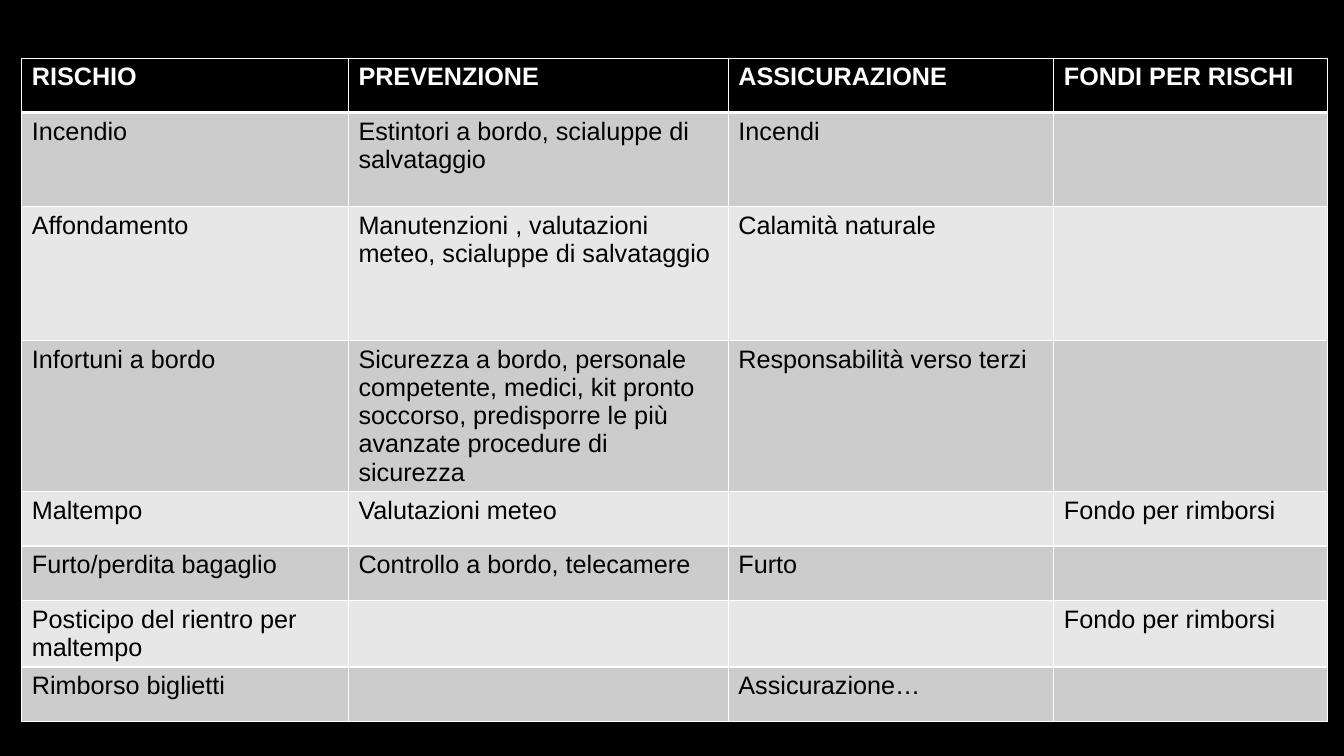
from lxml import etree
from pptx import Presentation
from pptx.dml.color import RGBColor
from pptx.oxml.ns import qn
from pptx.util import Pt

BLACK = RGBColor(0x00, 0x00, 0x00)
WHITE = RGBColor(0xFF, 0xFF, 0xFF)
GREY = RGBColor(0xCC, 0xCC, 0xCC)
LIGHT_GREY = RGBColor(0xE7, 0xE7, 0xE7)

COL_WIDTHS = [233.3, 271.4, 232.5, 195.7]
ROW_HEIGHTS = [38.9, 67, 95.8, 95.8, 38.9, 38.9, 38.9, 38.9]
RISKS = [
    ["RISCHIO", "PREVENZIONE", "ASSICURAZIONE", "FONDI PER RISCHI"],
    ["Incendio", "Estintori a bordo, scialuppe di salvataggio", "Incendi", ""],
    ["Affondamento",
     "Manutenzioni , valutazioni meteo, scialuppe di salvataggio",
     "Calamità naturale", ""],
    ["Infortuni a bordo",
     "Sicurezza a bordo, personale competente, medici, kit pronto soccorso, "
     "predisporre le più avanzate procedure di sicurezza",
     "Responsabilità verso terzi", ""],
    ["Maltempo", "Valutazioni meteo", "", "Fondo per rimborsi"],
    ["Furto/perdita bagaglio", "Controllo a bordo, telecamere", "Furto", ""],
    ["Posticipo del rientro per maltempo", "", "", "Fondo per rimborsi"],
    ["Rimborso biglietti", "", "Assicurazione…", ""],
]


def set_borders(cell, widths):
    """Draw white borders; widths in points for left, right, top, bottom."""
    tcPr = cell._tc.get_or_add_tcPr()
    for i, (side, width) in enumerate(zip("LRTB", widths)):
        ln = etree.Element(qn("a:ln" + side), w=str(Pt(width)))
        fill = etree.SubElement(ln, qn("a:solidFill"))
        etree.SubElement(fill, qn("a:srgbClr"), val=str(WHITE))
        tcPr.insert(i, ln)  # borders come before the cell fill


def format_cell(cell, value, row):
    header = row == 0
    cell.fill.solid()
    cell.fill.fore_color.rgb = BLACK if header else GREY if row % 2 else LIGHT_GREY
    set_borders(cell, (1, 1, 3 if row == 1 else 1, 3 if header else 1))
    if value:
        # Table cells take their font from the run
        r = cell.text_frame.paragraphs[0].add_run()
        r.text = value
        r.font.name = "Arial"
        r.font.size = Pt(18)
        r.font.bold = header
        r.font.color.rgb = WHITE if header else BLACK


def add_risk_table(s, left, top, width, height):
    """Place the risk table, sharing the box in the listed proportions."""
    tbl = s.shapes.add_table(len(RISKS), len(COL_WIDTHS), Pt(left), Pt(top),
                             Pt(width), Pt(height)).table
    for col, w in zip(tbl.columns, COL_WIDTHS):
        col.width = Pt(width * w / sum(COL_WIDTHS))
    for row, h in zip(tbl.rows, ROW_HEIGHTS):
        row.height = Pt(height * h / sum(ROW_HEIGHTS))
    for i, values in enumerate(RISKS):
        for j, value in enumerate(values):
            format_cell(tbl.cell(i, j), value, i)


def main():
    prs = Presentation()
    prs.slide_width, prs.slide_height = Pt(960), Pt(540)
    s = prs.slides.add_slide(prs.slide_layouts[6])

    # Black background
    s.background.fill.solid()
    s.background.fill.fore_color.rgb = BLACK

    # Risks and their cover
    add_risk_table(s, 15.6, 41.5, sum(COL_WIDTHS), sum(ROW_HEIGHTS))
    prs.save("out.pptx")


if __name__ == "__main__":
    main()
